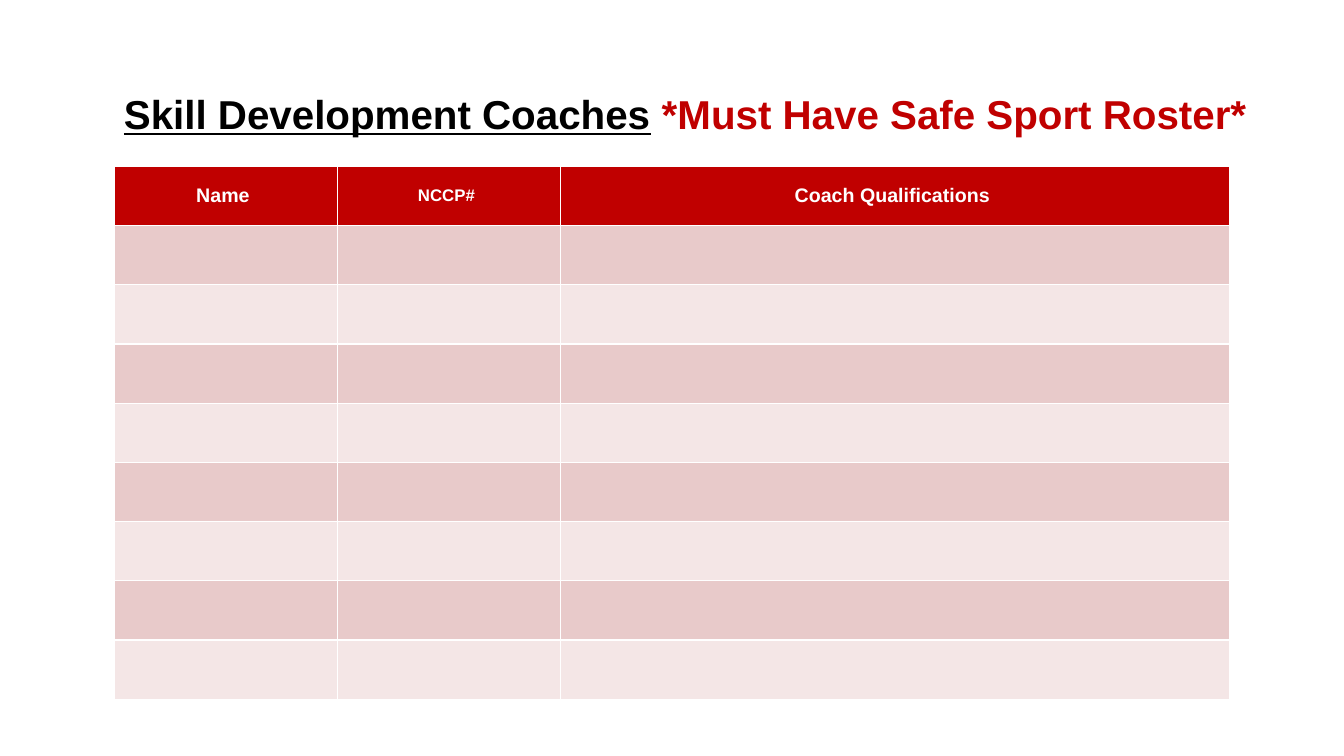
import pptx
import pptx.util
import pptx.dml.color
import pptx.enum.text

Pt = pptx.util.Pt
RED = "C00000"
WHITE = "FFFFFF"
ROW_FILLS = ["F4E6E6", "E8CACA"]  # even rows, odd rows
HEADINGS = [("Name ", 14), ("NCCP# ", 12), ("Coach Qualifications ", 14)]
COLUMN_WIDTHS = [159.4, 159.4, 478.2]
ROW_COUNT = 9
ROW_HEIGHT = 42.3


def rgb(hex_color):
    return pptx.dml.color.RGBColor.from_string(hex_color)


def add_run(paragraph, text, size, color, bold=True, underline=False):
    run = paragraph.add_run()
    run.text = text
    run.font.name = "Arial"
    run.font.size = Pt(size)
    run.font.color.rgb = rgb(color)
    run.font.bold = bold
    run.font.underline = underline


deck = pptx.Presentation()
deck.slide_width = Pt(960)
deck.slide_height = Pt(540)
slide = deck.slides.add_slide(deck.slide_layouts[6])

title = slide.shapes.add_textbox(Pt(81.5), Pt(48), Pt(850), Pt(70.8)).text_frame
title.word_wrap = True
title.vertical_anchor = pptx.enum.text.MSO_ANCHOR.MIDDLE
title_line = title.paragraphs[0]
title_line.line_spacing = 0.9
add_run(title_line, "Skill Development Coaches", 28.8, "000000", underline=True)
add_run(title_line, " ", 28.8, "000000", bold=False)
add_run(title_line, "*Must Have Safe Sport Roster*", 28.8, RED)

# The default table style supplies the white rules, thicker under the header.
roster = slide.shapes.add_table(
    ROW_COUNT, len(HEADINGS), Pt(81.5), Pt(118.8),
    Pt(sum(COLUMN_WIDTHS)), Pt(ROW_COUNT * ROW_HEIGHT)).table
for column, width in zip(roster.columns, COLUMN_WIDTHS):
    column.width = Pt(width)

for row_index, row in enumerate(roster.rows):
    row.height = Pt(ROW_HEIGHT)
    for cell in row.cells:
        cell.fill.solid()
        cell.fill.fore_color.rgb = rgb(ROW_FILLS[row_index % 2] if row_index else RED)

for cell, (heading, size) in zip(roster.rows[0].cells, HEADINGS):
    cell.vertical_anchor = pptx.enum.text.MSO_ANCHOR.MIDDLE
    heading_line = cell.text_frame.paragraphs[0]
    heading_line.alignment = pptx.enum.text.PP_ALIGN.CENTER
    add_run(heading_line, heading, size, WHITE)

deck.save("out.pptx")
